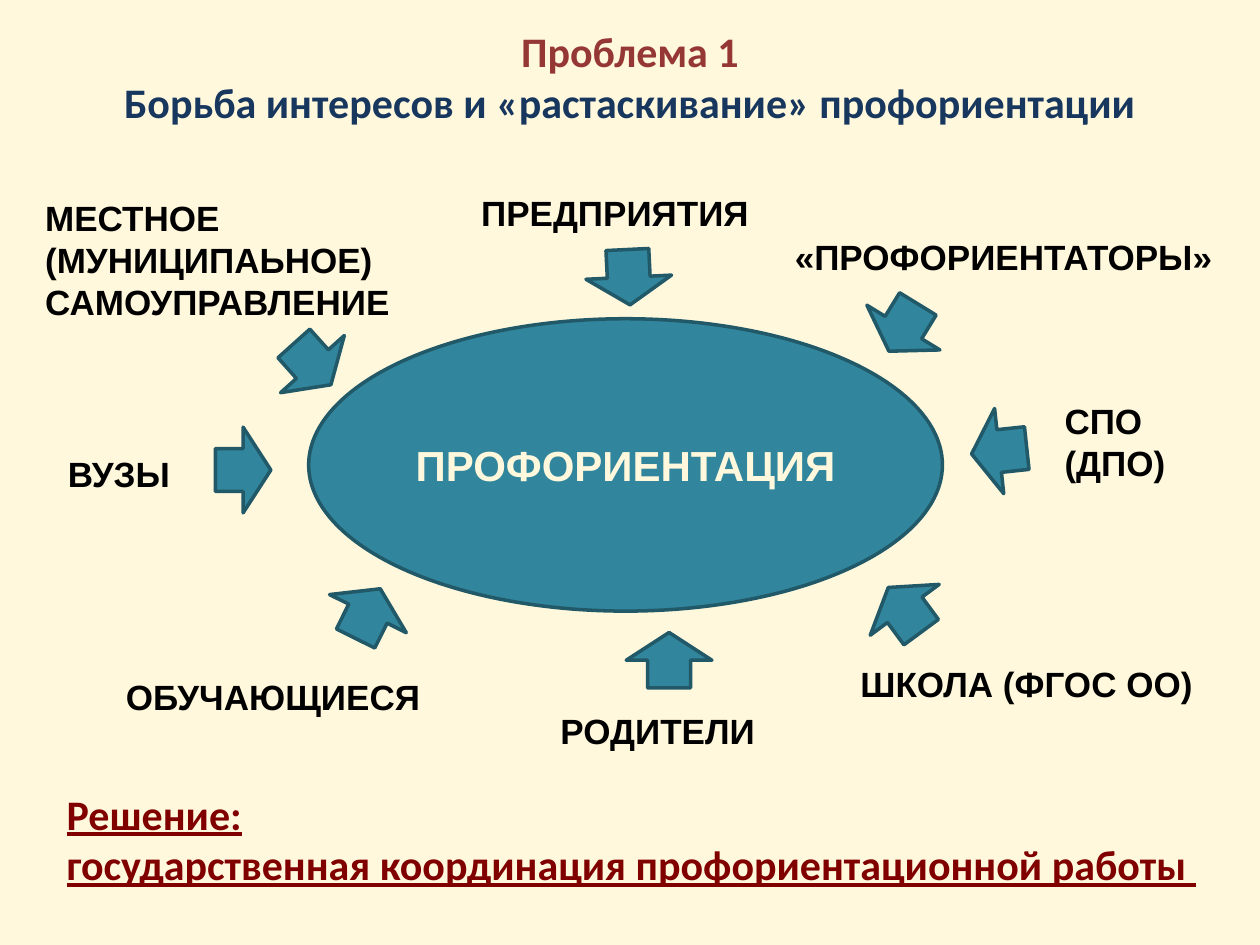
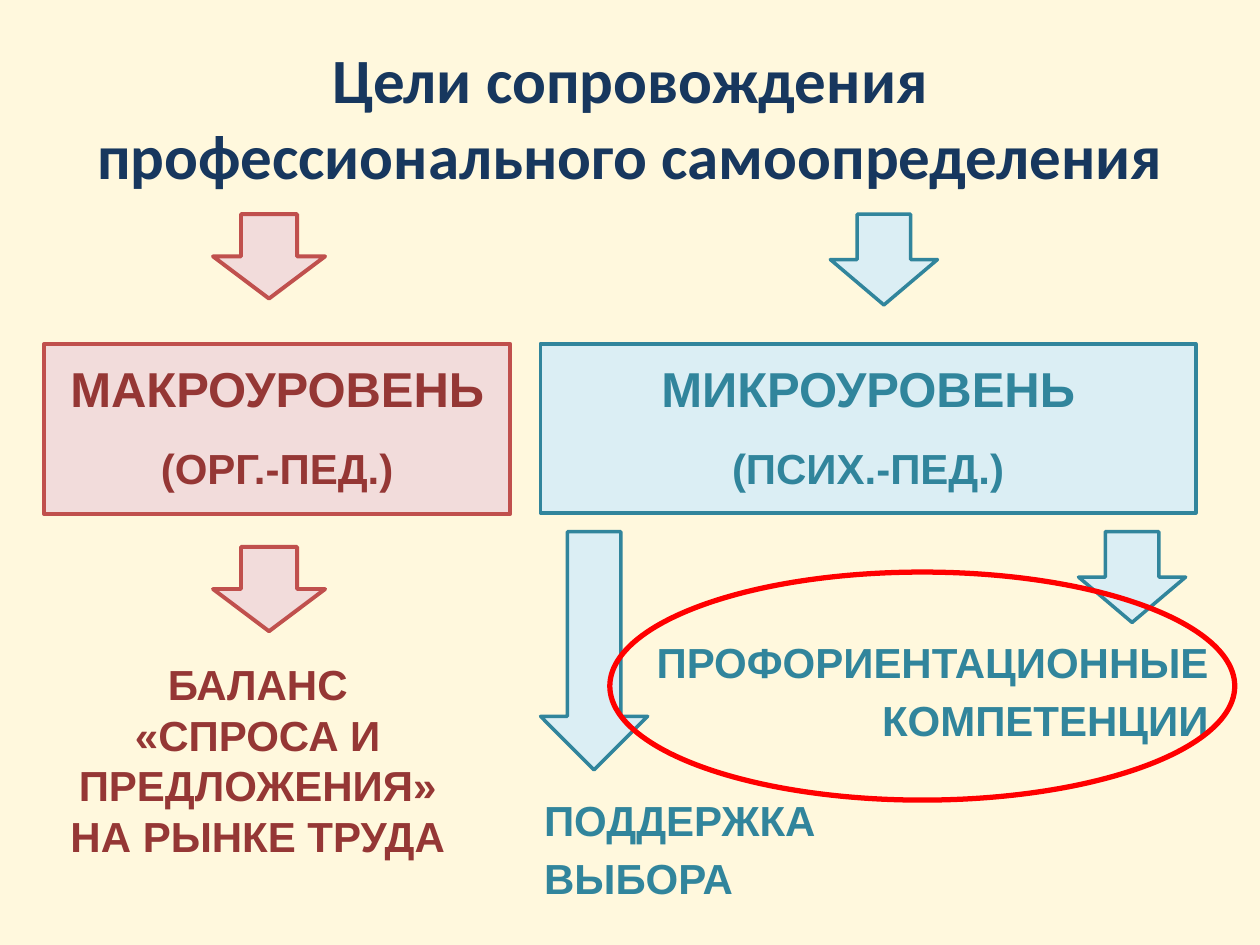
from pptx import Presentation
from pptx import util as u
from pptx.dml.color import RGBColor
from pptx.enum import shapes, text

# Shared look
CREAM, NAVY, BLACK, WINE = "FFF8DD", "17375E", "000000", "800000"
TEAL, DARK_TEAL, PALE_TEAL = "31859C", "215968", "DBEEF4"
BRICK, DARK_BRICK, PALE_BRICK = "C0504D", "953735", "F2DCDB"
RED = "FF0000"
LEFT, CENTER, RIGHT = text.PP_ALIGN.LEFT, text.PP_ALIGN.CENTER, text.PP_ALIGN.RIGHT
TOP, MIDDLE = text.MSO_ANCHOR.TOP, text.MSO_ANCHOR.MIDDLE
RECTANGLE = shapes.MSO_SHAPE.RECTANGLE
OVAL = shapes.MSO_SHAPE.OVAL
DOWN_ARROW = shapes.MSO_SHAPE.DOWN_ARROW

presentation = Presentation()
presentation.slide_width, presentation.slide_height = u.Inches(10), u.Inches(7.5)
CELL = presentation.slide_width // 100  # grid of 100 columns by 75 rows


def color(value):
    return RGBColor.from_string(value)


def add_item(slide, box, words="", kind=None, fill=None, line=None, width=2, rotation=0,
             size=20, ink=BLACK, font="Arial", align=LEFT, anchor=TOP, spacing=None, after=None):
    """Place a text box, or a preset shape if kind is given; box is in grid cells."""
    place = [round(length * CELL) for length in box]
    if kind is None:
        shape = slide.shapes.add_textbox(*place)
    else:
        shape = slide.shapes.add_shape(kind, *place)
        shape.shadow.inherit = False
        shape.rotation = rotation
        shape.line.color.rgb = color(line)
        shape.line.width = u.Pt(width)
        if fill:
            shape.fill.solid()
            shape.fill.fore_color.rgb = color(fill)
        else:
            shape.fill.background()
    frame = shape.text_frame
    frame.word_wrap = True
    frame.vertical_anchor = anchor
    frame.text = words
    for paragraph in frame.paragraphs:
        paragraph.alignment = align
        paragraph.line_spacing = spacing
        paragraph.space_after = after
        for run in paragraph.runs:
            run.font.name, run.font.size, run.font.bold = font, u.Pt(size), True
            run.font.color.rgb = color(ink)
    return shape


# Slides with background and title
titles = [
    (-0.2, 24, "Проблема 1\vБорьба интересов и «растаскивание» профориентации"),
    (3, 36, "Цели сопровождения профессионального самоопределения"),
]
slides = []
for top, size, words in titles:
    slide = presentation.slides.add_slide(presentation.slide_layouts[6])
    slide.background.fill.solid()
    slide.background.fill.fore_color.rgb = color(CREAM)
    title = add_item(slide, (5, top, 90, 12.5), words, size=size, ink=NAVY,
                     font="Calibri", align=CENTER, anchor=MIDDLE)
    slides.append((slide, title))
(problem, problem_title), (goals, goals_title) = slides
problem_title.text_frame.paragraphs[0].runs[0].font.color.rgb = color(DARK_BRICK)

# Slide 1: the contested centre
add_item(problem, (24.5, 25.3, 50.3, 23.2), "ПРОФОРИЕНТАЦИЯ", OVAL, TEAL, DARK_TEAL,
         size=24, ink=CREAM, align=CENTER, anchor=MIDDLE)

# Interested parties: label, its box, then the arrow's left, top and rotation
parties = [
    ("МЕСТНОЕ (МУНИЦИПАЬНОЕ) САМОУПРАВЛЕНИЕ", (2.6, 15.1, 30.6, 10.1), 21.4, 26.7, 318.1),
    ("«ПРОФОРИЕНТАТОРЫ»", (62.1, 18.2, 35.9, 4), 68.3, 23.8, 31.5),
    ("ПРЕДПРИЯТИЯ", (37.2, 14.7, 23.4, 4), 46.5, 19.8, 357.2),
    ("ВУЗЫ", (4.4, 35.4, 15.1, 4), 15.9, 35.1, 270),
    ("СПО\n(ДПО)", (83.5, 31.2, 11.5, 7.7), 75.9, 33.6, 83.9),
    ("ОБУЧАЮЩИЕСЯ", (9, 53.1, 25.5, 4), 25.8, 46.5, 206.4),
    ("ШКОЛА (ФГОС ОО)", (67.3, 52.1, 28.8, 4.4), 68.4, 46.2, 143.6),
    ("РОДИТЕЛИ", (43.5, 55.8, 18.3, 4), 49.7, 50.2, 180),
]
for label, box, left, top, rotation in parties:
    add_item(problem, box, label)
    add_item(problem, (left, top, 6.8, 4.4), "", DOWN_ARROW, TEAL, DARK_TEAL, rotation=rotation)

# Solution
solution = add_item(problem, (4.3, 60.3, 93.7, 12.5),
                    "Решение:\nгосударственная координация профориентационной работы ",
                    size=24, ink=WINE, font="Calibri", anchor=MIDDLE)
for paragraph in solution.text_frame.paragraphs:
    paragraph.runs[0].font.underline = True

# Slide 2: level boxes
roomy = dict(spacing=1.15, after=u.Pt(10))
levels = [
    ("МАКРОУРОВЕНЬ\n(ОРГ.-ПЕД.)", (3.5, 27.3, 37, 13.5), PALE_BRICK, BRICK, DARK_BRICK),
    ("МИКРОУРОВЕНЬ\n(ПСИХ.-ПЕД.)", (42.9, 27.3, 52, 13.4), PALE_TEAL, TEAL, TEAL),
]
for words, box, fill, line, ink in levels:
    level = add_item(goals, box, words, RECTANGLE, fill, line, 2.25,
                     size=28, ink=ink, align=CENTER, **roomy)
    level.text_frame.paragraphs[1].runs[0].font.size = u.Pt(24)

# Arrows into and out of the levels
for top in (17, 43.4):
    add_item(goals, (16.9, top, 8.9, 6.7), "", DOWN_ARROW, PALE_BRICK, BRICK, 2.25)
for left, top, height in [(65.9, 17, 7.2), (42.9, 42.2, 18.9), (85.6, 42.2, 7.2)]:
    add_item(goals, (left, top, 8.5, height), "", DOWN_ARROW, PALE_TEAL, TEAL)

# Outcomes
add_item(goals, (3.5, 51.8, 33.9, 9.3), "БАЛАНС\n«СПРОСА И ПРЕДЛОЖЕНИЯ» НА РЫНКЕ ТРУДА",
         size=24, ink=DARK_BRICK, align=CENTER)
add_item(goals, (42.2, 62, 25, 9.3), "ПОДДЕРЖКА ВЫБОРА", size=24, ink=TEAL, **roomy)
add_item(goals, (50, 49.4, 46.9, 9.3), "ПРОФОРИЕНТАЦИОННЫЕ КОМПЕТЕНЦИИ",
         size=24, ink=TEAL, align=RIGHT, **roomy)

# Highlight ring
add_item(goals, (48.4, 45.4, 49.6, 18.1), "", OVAL, None, RED, 3)

presentation.save("out.pptx")
